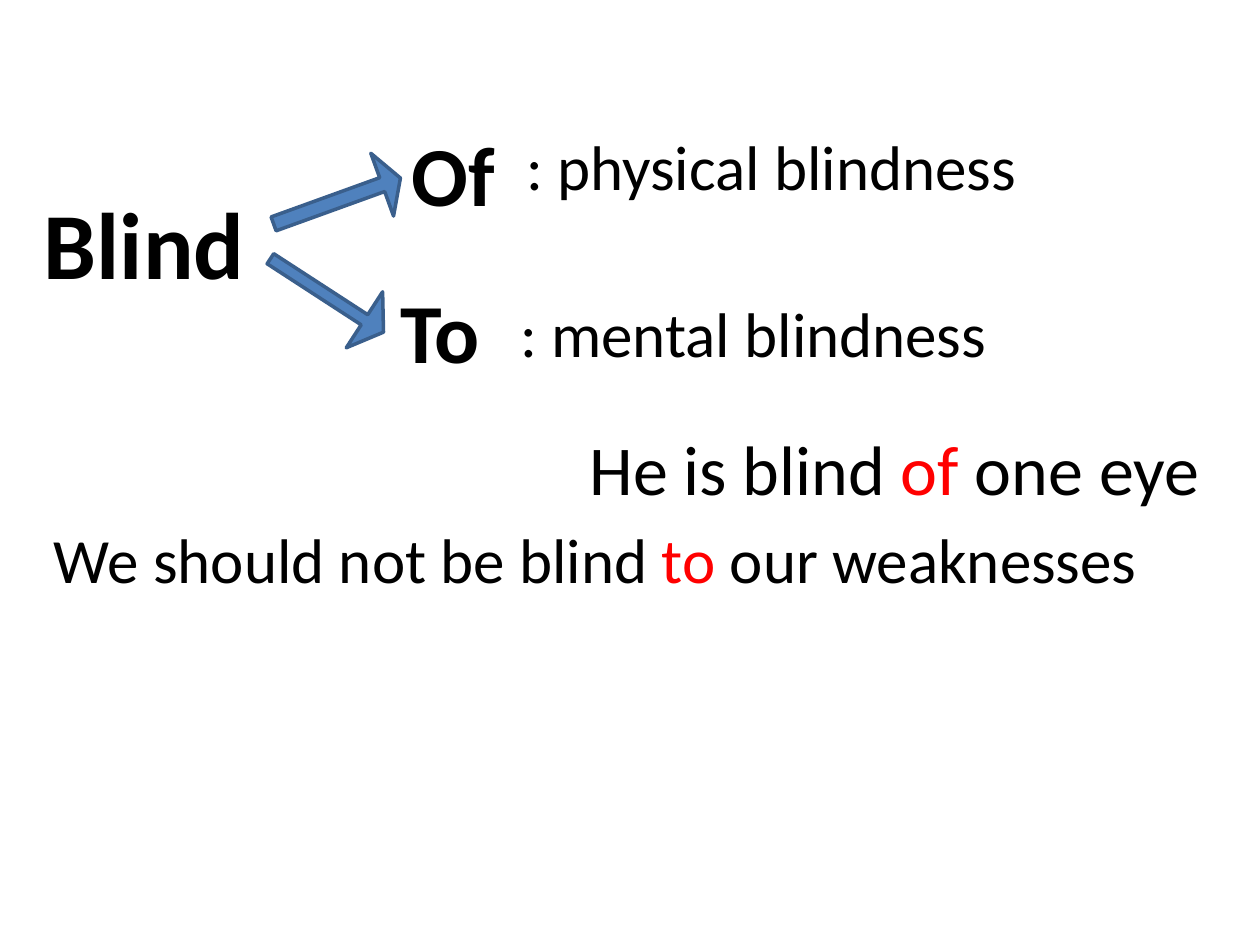
"""Build a slide on the prepositions that follow the word blind."""
from pptx import Presentation
from pptx.dml.color import RGBColor
from pptx.enum.shapes import MSO_SHAPE
from pptx.enum.text import MSO_AUTO_SIZE
from pptx.util import Inches, Pt

BLACK = "000000"
RED = "FF0000"


def color(value):
    """Return the colour for a hex string."""
    return RGBColor.from_string(value)


def add_text(slide, box, size, runs, bold=False, wrap=False):
    """Add a one-line text box from (text, colour) runs."""
    shape = slide.shapes.add_textbox(*map(Inches, box))
    frame = shape.text_frame
    frame.word_wrap = wrap
    frame.auto_size = MSO_AUTO_SIZE.SHAPE_TO_FIT_TEXT
    paragraph = frame.paragraphs[0]
    for text, run_color in runs:
        run = paragraph.add_run()
        run.text = text
        run.font.color.rgb = color(run_color)
    paragraph.font.name = "Calibri"
    paragraph.font.size = Pt(size)
    paragraph.font.bold = bold


def add_arrow(slide, left, top, rotation, adjustments):
    """Add a rotated blue block arrow."""
    shape = slide.shapes.add_shape(
        MSO_SHAPE.RIGHT_ARROW, Inches(left), Inches(top), Inches(1.07), Inches(0.53))
    shape.rotation = rotation
    for index, value in enumerate(adjustments):
        shape.adjustments[index] = value
    shape.shadow.inherit = False
    shape.fill.solid()
    shape.fill.fore_color.rgb = color("4F81BD")
    shape.line.color.rgb = color("3A5F8C")
    shape.line.width = Pt(2)


def main():
    """Build and save the slide."""
    presentation = Presentation()
    presentation.slide_width = Inches(10)
    presentation.slide_height = Inches(7.5)
    slide = presentation.slides.add_slide(presentation.slide_layouts[6])

    add_text(slide, (0.25, 1.42, 3.5, 1.01), 54, [("Blind", BLACK)], bold=True, wrap=True)
    add_text(slide, (3.17, 0.92, 1.25, 0.91), 48, [("Of", BLACK)], bold=True, wrap=True)
    add_text(slide, (3.08, 2.17, 0.84, 0.91), 48, [("To", BLACK)], bold=True)
    add_arrow(slide, 2.06, 2.08, 33, (0.18, 0.34))
    add_arrow(slide, 2.14, 1.33, 340.1, (0.22, 0.29))
    add_text(slide, (4.08, 0.96, 4.13, 0.71), 36, [(": physical blindness", BLACK)])
    add_text(slide, (4.03, 2.29, 4.05, 0.71), 36, [(": mental blindness", BLACK)])
    add_text(slide, (4.58, 3.33, 5.09, 0.77), 40,
             [("He is blind ", BLACK), ("of", RED), (" one eye", BLACK)])
    add_text(slide, (0.33, 4.08, 8.99, 0.71), 36,
             [("We should not be blind ", BLACK), ("to", RED), (" our weaknesses", BLACK)])

    presentation.save("out.pptx")


if __name__ == "__main__":
    main()
